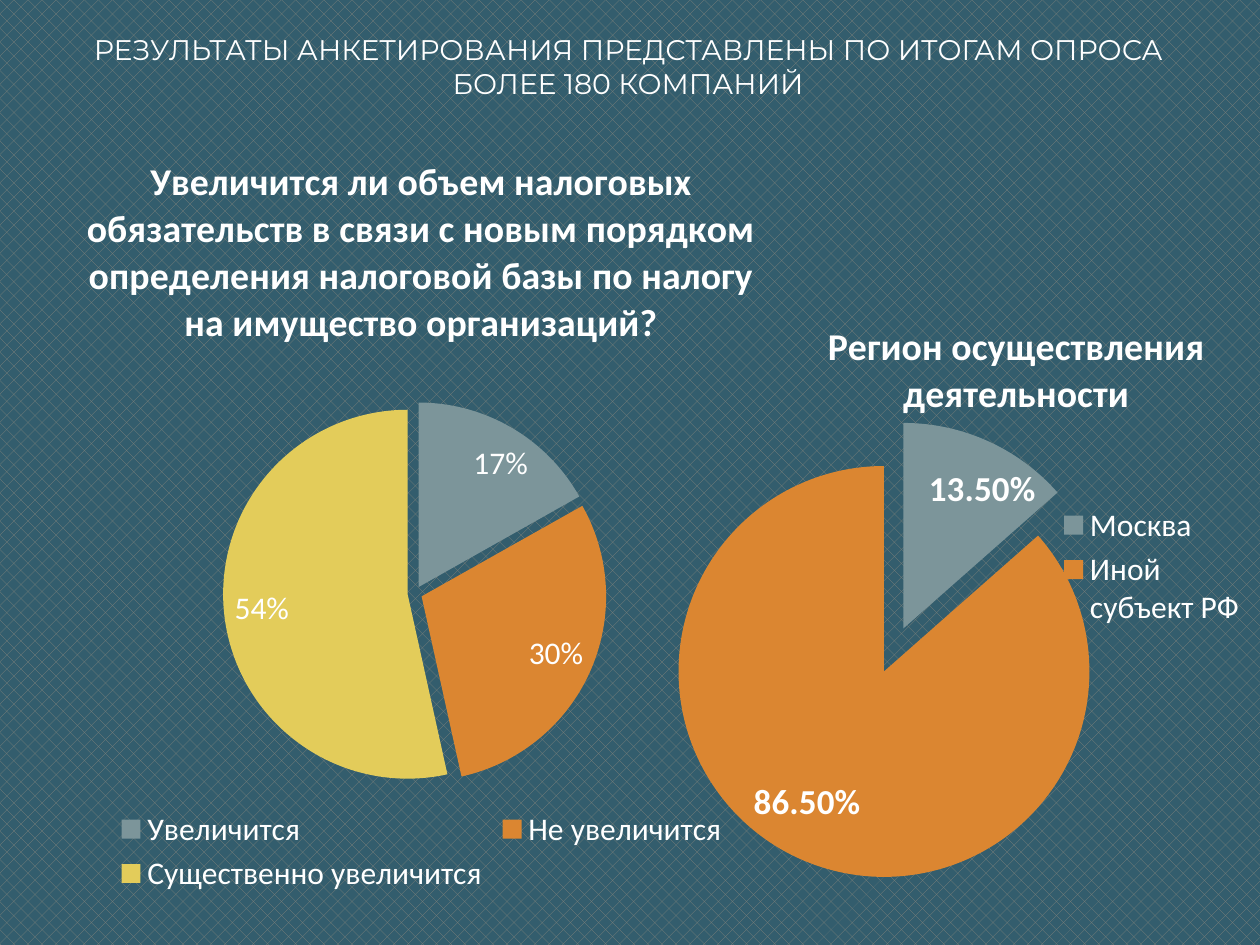
from lxml.etree import SubElement
from pptx import Presentation
from pptx.chart.data import CategoryChartData
from pptx.dml.color import RGBColor
from pptx.enum.chart import XL_CHART_TYPE, XL_LABEL_POSITION, XL_LEGEND_POSITION
from pptx.enum.dml import MSO_PATTERN
from pptx.enum.text import MSO_ANCHOR, PP_ALIGN
from pptx.oxml.ns import qn
from pptx.util import Emu, Pt

WHITE = RGBColor(0xFF, 0xFF, 0xFF)
TEAL = RGBColor(0x33, 0x5D, 0x6D)
HATCH = RGBColor(0x82, 0x84, 0x7C)
SLICE_COLORS = [
    RGBColor(0x7C, 0x95, 0x9A),
    RGBColor(0xDB, 0x86, 0x31),
    RGBColor(0xE3, 0xCC, 0x5A),
]
PX = 914400 // 126

TITLE = "РЕЗУЛЬТАТЫ АНКЕТИРОВАНИЯ ПРЕДСТАВЛЕНЫ ПО ИТОГАМ ОПРОСА БОЛЕЕ 180 КОМПАНИЙ"
TITLE_BOX = (64, 26, 1128, 80)

# All places are slide px; each slice is name, value, explosion, label shift
CHARTS = [
    {
        "title": "Регион осуществления деятельности",
        "box": (660, 254, 600, 625),
        "title_at": (821, 312),
        "plot_box": (698, 406, 411, 445),
        "slices": [
            ("Москва", 0.135, 0, (51, 19)),
            ("Иной субъект РФ", 0.865, 23, (-49, -28)),
        ],
        "format": "0.00%",
        "label_size": 20,
        "label_bold": True,
        "legend": XL_LEGEND_POSITION.RIGHT,
    },
    {
        "title": "Увеличится ли объем налоговых обязательств в связи с новым порядком "
                 "определения налоговой базы по налогу на имущество организаций?",
        "box": (-25, 125, 893, 774),
        "title_at": (80, 147),
        "plot_box": (230, 409, 370, 369),
        "slices": [
            ("Увеличится", 17, 4, (20, 10)),
            ("Не увеличится", 30, 4, (0, 4)),
            ("Существенно увеличится", 54, 4, (3, 14)),
        ],
        "format": '0"%"',
        "label_size": 18,
        "label_bold": False,
        "legend": XL_LEGEND_POSITION.BOTTOM,
    },
]


def to_emu(box):
    return [Emu(value * PX) for value in box]


def within(frame, box):
    """Turn a place in slide px into fractions of the chart frame."""
    left, top, width, height = frame
    x, y, *size = box
    return [(x - left) / width, (y - top) / height,
            *(length / whole for length, whole in zip(size, (width, height)))]


def set_layout(parent, position, fractions, settings=()):
    """Give a chart part a manual layout, as its child number `position`."""
    for old in parent.findall(qn("c:layout")):
        parent.remove(old)
    layout = parent.makeelement(qn("c:layout"), {})
    manual = SubElement(layout, qn("c:manualLayout"))
    for name, value in [*settings, *zip("xywh", fractions)]:
        SubElement(manual, qn(f"c:{name}")).set("val", str(value))
    parent.insert(position, layout)


def format_font(font, size, bold=False):
    font.name = "Calibri"
    font.size = Pt(size)
    font.bold = bold
    font.color.rgb = WHITE


def format_slice(series, index, content):
    _, _, explosion, shift = content["slices"][index]
    point = series.points[index]
    point.format.fill.solid()
    point.format.fill.fore_color.rgb = SLICE_COLORS[index]
    properties = series._element.findall(qn("c:dPt"))[index].find(qn("c:spPr"))
    properties.addprevious(
        properties.makeelement(qn("c:explosion"), {"val": str(explosion)}))

    label = point.data_label
    format_font(label.font, content["label_size"], content["label_bold"])
    label.position = XL_LABEL_POSITION.INSIDE_END
    element = label._get_or_add_dLbl()
    element.insert(1, element.makeelement(
        qn("c:numFmt"), {"formatCode": content["format"], "sourceLinked": "0"}))
    set_layout(element, 1, within((0, 0, *content["box"][2:]), shift))


def add_pie(slide, content):
    names, values, _, _ = zip(*content["slices"])
    data = CategoryChartData(number_format=content["format"])
    data.categories = names
    data.add_series(content["title"], values)
    chart = slide.shapes.add_chart(XL_CHART_TYPE.PIE, *to_emu(content["box"]), data).chart
    format_font(chart.font, 18)

    chart.has_title = True
    chart.chart_title.include_in_layout = False
    paragraph = chart.chart_title.text_frame.paragraphs[0]
    paragraph.text = content["title"]
    format_font(paragraph.font, 21.6, bold=True)

    chart.has_legend = True
    chart.legend.position = content["legend"]
    chart.legend.include_in_layout = False

    plot = chart.plots[0]
    plot.vary_by_categories = True
    series = plot.series[0]
    labels = series.data_labels
    labels.show_value = True
    labels.show_percentage = False
    labels.number_format = content["format"]
    labels.number_format_is_linked = False
    labels.position = XL_LABEL_POSITION.INSIDE_END
    format_font(labels.font, content["label_size"], content["label_bold"])
    for index in range(len(values)):
        format_slice(series, index, content)

    edges = [("xMode", "edge"), ("yMode", "edge")]
    set_layout(chart.chart_title._element, 1,
               within(content["box"], content["title_at"]), edges)
    set_layout(chart._chartSpace.chart.plotArea, 0,
               within(content["box"], content["plot_box"]),
               [("layoutTarget", "inner"), *edges])


def add_title(slide):
    title = slide.shapes.title
    title.left, title.top, title.width, title.height = to_emu(TITLE_BOX)
    frame = title.text_frame
    frame.word_wrap = True
    frame.vertical_anchor = MSO_ANCHOR.MIDDLE
    paragraph = frame.paragraphs[0]
    paragraph.text = TITLE
    paragraph.alignment = PP_ALIGN.CENTER
    paragraph.font.name = "Montserrat"
    paragraph.font.size = Pt(16.2)
    paragraph.font.color.rgb = WHITE


def main():
    presentation = Presentation()
    presentation.slide_width, presentation.slide_height = to_emu((1260, 945))
    slide = presentation.slides.add_slide(presentation.slide_layouts[5])
    background = slide.background.fill
    background.patterned()
    background.pattern = MSO_PATTERN.PERCENT_25
    background.fore_color.rgb = HATCH
    background.back_color.rgb = TEAL
    add_title(slide)
    for content in CHARTS:
        add_pie(slide, content)
    presentation.save("out.pptx")


if __name__ == "__main__":
    main()
